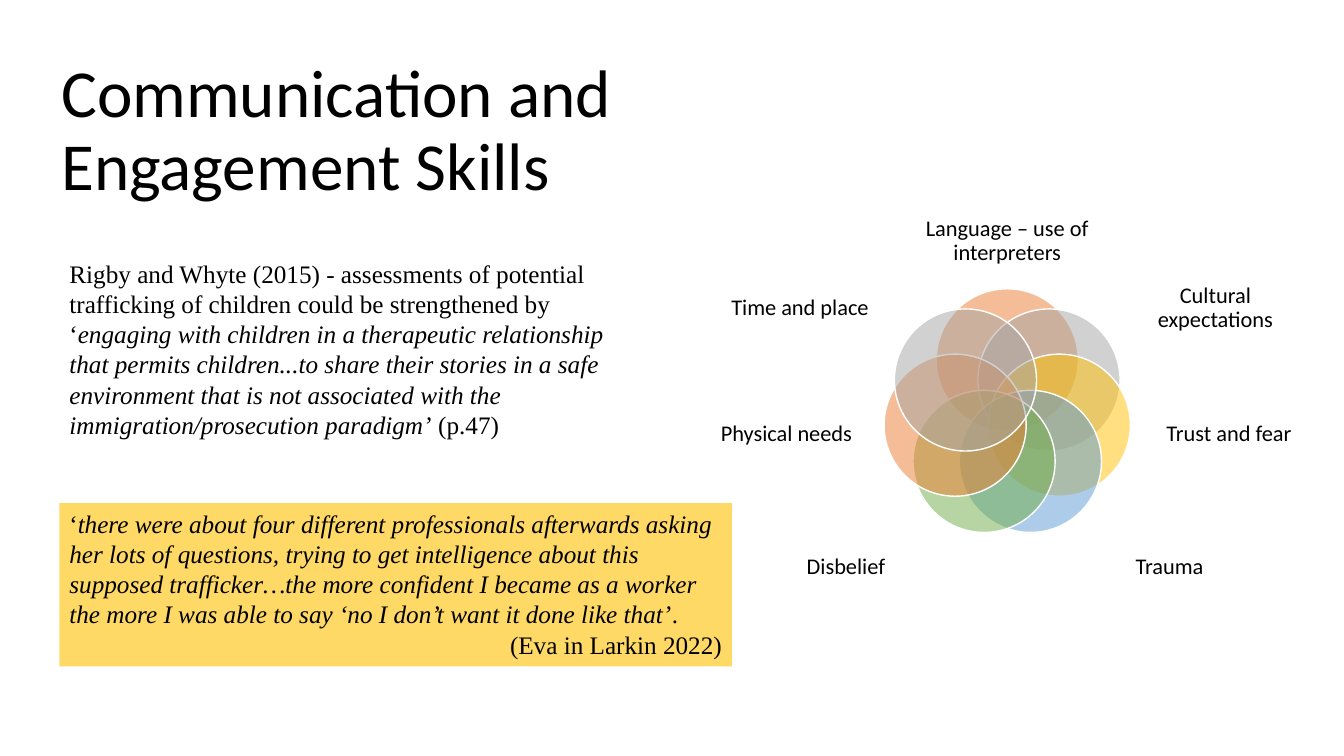
from dataclasses import dataclass
from math import cos, pi, sin

from lxml.etree import SubElement
from pptx import Presentation
from pptx.dml.color import RGBColor
from pptx.enum.shapes import MSO_SHAPE
from pptx.enum.text import MSO_ANCHOR, PP_ALIGN
from pptx.oxml.ns import qn
from pptx.util import Inches, Pt

BLACK = RGBColor(0x00, 0x00, 0x00)
WHITE = RGBColor(0xFF, 0xFF, 0xFF)
ORANGE = RGBColor(0xED, 0x7D, 0x31)
GRAY = RGBColor(0xA5, 0xA5, 0xA5)
GOLD = RGBColor(0xFF, 0xC0, 0x00)
BLUE = RGBColor(0x5B, 0x9B, 0xD5)
GREEN = RGBColor(0x70, 0xAD, 0x47)
PALE_GOLD = RGBColor(0xFF, 0xD9, 0x66)

RING_X, RING_Y, RING_RADIUS = 9.99, 4.1, 0.53
CIRCLE_SIZE = 1.41
TITLE_FORMAT = {"name": "Calibri", "size": Pt(48)}
LABEL_FORMAT = {"name": "Calibri", "size": Pt(16)}
QUOTE_FORMAT = {"name": "Times New Roman", "size": Pt(18)}


@dataclass
class Box:
    left: float
    top: float
    width: float
    height: float

    def lengths(self) -> list:
        return [Inches(n) for n in (self.left, self.top, self.width, self.height)]


@dataclass
class Petal:
    label: str
    color: RGBColor
    box: Box
    anchor: MSO_ANCHOR = MSO_ANCHOR.MIDDLE


@dataclass
class Run:
    text: str
    italic: bool = False


# Circles clockwise from the top, each with its label
PETALS = [
    Petal("Language – use of interpreters", ORANGE, Box(9.18, 1.76, 1.62, 0.87), MSO_ANCHOR.BOTTOM),
    Petal("Cultural expectations", GRAY, Box(11.29, 2.58, 1.53, 0.95)),
    Petal("Trust and fear", GOLD, Box(11.44, 3.8, 1.5, 1.02)),
    Petal("Trauma", BLUE, Box(10.79, 5.16, 1.62, 0.93)),
    Petal("Disbelief", GREEN, Box(7.58, 5.16, 1.62, 0.93)),
    Petal("Physical needs", ORANGE, Box(7.05, 3.8, 1.5, 1.02)),
    Petal("Time and place", GRAY, Box(7.17, 2.58, 1.53, 0.95)),
]
RESEARCH = [
    Run("Rigby and Whyte (2015) - assessments of potential trafficking of children "
        "could be strengthened by ‘"),
    Run("engaging with children in a therapeutic relationship that permits children...to share "
        "their stories in a safe environment that is not associated with the "
        "immigration/prosecution paradigm’", True),
    Run(" (p.47)"),
]
TESTIMONY = [
    Run("‘"),
    Run("there were about four different professionals afterwards asking her lots of questions, "
        "trying to get intelligence about this supposed trafficker…the more confident I became "
        "as a worker the more I was able to say ‘no I don’t want it done like that’", True),
    Run("."),
]


def add_runs(paragraph, runs: list[Run], font_format: dict) -> None:
    for item in runs:
        run = paragraph.add_run()
        run.text = item.text
        run.font.italic = item.italic
        run.font.color.rgb = BLACK
        for name, value in font_format.items():
            setattr(run.font, name, value)


def add_text(slide, box: Box, runs: list[Run], font_format: dict,
             paragraph_format: dict, frame_format: dict):
    shape = slide.shapes.add_textbox(*box.lengths())
    frame = shape.text_frame
    frame.word_wrap = True
    for name, value in frame_format.items():
        setattr(frame, name, value)
    paragraph = frame.paragraphs[0]
    for name, value in paragraph_format.items():
        setattr(paragraph, name, value)
    add_runs(paragraph, runs, font_format)
    return shape


def add_petal(slide, index: int, petal: Petal) -> None:
    angle = 2 * pi * index / len(PETALS)
    box = Box(RING_X + RING_RADIUS * sin(angle) - CIRCLE_SIZE / 2,
              RING_Y - RING_RADIUS * cos(angle) - CIRCLE_SIZE / 2,
              CIRCLE_SIZE, CIRCLE_SIZE)
    circle = slide.shapes.add_shape(MSO_SHAPE.OVAL, *box.lengths())
    circle.shadow.inherit = False
    circle.fill.solid()
    circle.fill.fore_color.rgb = petal.color
    color = circle.fill._xPr.find(qn("a:solidFill"))[0]
    SubElement(color, qn("a:alpha"), val="50000")
    circle.line.color.rgb = WHITE
    circle.line.width = Pt(1)
    margins = {f"margin_{side}": 0 for side in ("left", "top", "right", "bottom")}
    add_text(slide, petal.box, [Run(petal.label)], LABEL_FORMAT,
             {"alignment": PP_ALIGN.CENTER, "line_spacing": 0.9},
             {"vertical_anchor": petal.anchor, **margins})


def main() -> None:
    presentation = Presentation()
    presentation.slide_width = Inches(13.33)
    presentation.slide_height = Inches(7.5)
    slide = presentation.slides.add_slide(presentation.slide_layouts[6])

    # Title
    add_text(slide, Box(0.51, 0.39, 5.7, 1.84), [Run("Communication and Engagement Skills")],
             TITLE_FORMAT, {"line_spacing": 0.9, "space_after": Pt(6)},
             {"vertical_anchor": MSO_ANCHOR.MIDDLE})

    # Ring of overlapping circles
    for index, petal in enumerate(PETALS):
        add_petal(slide, index, petal)

    # Quotations
    add_text(slide, Box(0.59, 2.51, 5.89, 1.92), RESEARCH, QUOTE_FORMAT, {}, {})
    panel = add_text(slide, Box(0.59, 4.99, 6.67, 1.62), TESTIMONY, QUOTE_FORMAT, {}, {})
    panel.fill.solid()
    panel.fill.fore_color.rgb = PALE_GOLD
    credit = panel.text_frame.add_paragraph()
    credit.alignment = PP_ALIGN.RIGHT
    add_runs(credit, [Run("(Eva in Larkin 2022)")], QUOTE_FORMAT)

    presentation.save("out.pptx")


if __name__ == "__main__":
    main()
